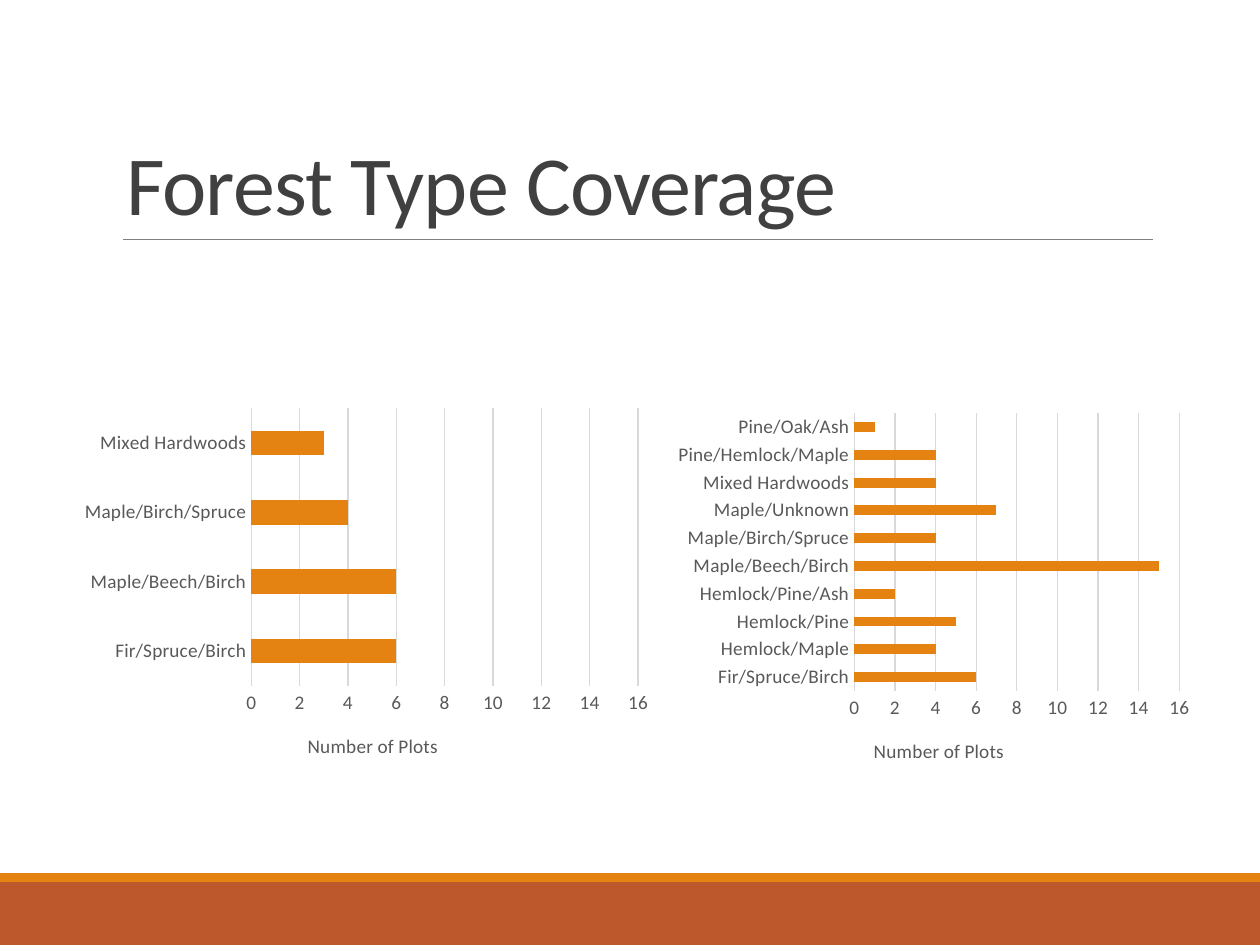
from lxml import etree
from pptx import Presentation
from pptx.chart.data import CategoryChartData
from pptx.dml.color import RGBColor
from pptx.enum.chart import XL_CHART_TYPE, XL_TICK_MARK
from pptx.enum.shapes import MSO_CONNECTOR, MSO_SHAPE
from pptx.enum.text import MSO_ANCHOR, MSO_AUTO_SIZE, PP_ALIGN
from pptx.oxml import parse_xml
from pptx.oxml.ns import nsdecls, qn
from pptx.util import Inches, Pt

FONT = "Calibri"
ORANGE, RUST = "E48312", "BD582C"
DARK, GREY, PALE = "404040", "595959", "D9D9D9"


def color(code):
    return RGBColor.from_string(code)


def style(font, size, code):
    font.name, font.size, font.bold = FONT, Pt(size), False
    font.color.rgb = color(code)


def stroke(line, code, width):
    line.color.rgb = color(code)
    line.width = Pt(width)


def band(slide, left, top, width, height, code):
    bar = slide.shapes.add_shape(MSO_SHAPE.RECTANGLE, Inches(left), Inches(top),
                                 Inches(width), Inches(height))
    bar.shadow.inherit = False
    bar.fill.solid()
    bar.fill.fore_color.rgb = color(code)
    bar.line.fill.background()


def footer(slide, left, top, width, height):
    trim = 0.07
    band(slide, left, top + trim, width, height - trim, RUST)
    band(slide, left, top, width, trim, ORANGE)


def heading(slide, text, left, top, width, height):
    """Fill the title placeholder and rule a line along its foot."""
    title = slide.shapes.title
    title.left, title.top = Inches(left), Inches(top)
    title.width, title.height = Inches(width), Inches(height)
    frame = title.text_frame
    frame.text = text
    frame.word_wrap = True
    frame.auto_size = MSO_AUTO_SIZE.NONE
    frame.vertical_anchor = MSO_ANCHOR.BOTTOM
    para = frame.paragraphs[0]
    para.alignment = PP_ALIGN.LEFT
    para.line_spacing = 0.85
    run = para.runs[0]
    style(run.font, 48, DARK)
    run.font.bold = None
    run.font._element.set("spc", "-50")

    foot = Inches(top + height)
    rule = slide.shapes.add_connector(MSO_CONNECTOR.STRAIGHT, Inches(left + 0.08),
                                      foot, Inches(left + width), foot)
    stroke(rule.line, "808080", 0.5)
    etree.SubElement(rule._element.spPr, qn("a:effectLst"))


def layout(x, y, size=None):
    """Give a manual layout in fractions of the chart."""
    parts = [("xMode", "edge"), ("yMode", "edge"), ("x", x), ("y", y)]
    if size:
        parts.insert(0, ("layoutTarget", "inner"))
        parts += [("w", size[0]), ("h", size[1])]
    body = "".join(f'<c:{tag} val="{val}"/>' for tag, val in parts)
    return parse_xml(f'<c:layout {nsdecls("c")}><c:manualLayout>{body}'
                     "</c:manualLayout></c:layout>")


def place(parent, node, index):
    for old in parent.findall(qn("c:layout")):
        parent.remove(old)
    parent.insert(index, node)


def bars(slide, counts, left, top, width, height, plot, label):
    """Chart plot counts; plot is (x, width) and label is x, as fractions."""
    data = CategoryChartData()
    data.categories = list(counts)
    data.add_series("Series 1", list(counts.values()))
    chart = slide.shapes.add_chart(XL_CHART_TYPE.BAR_CLUSTERED, Inches(left),
                                   Inches(top), Inches(width), Inches(height),
                                   data).chart
    chart.has_legend = chart.has_title = False
    style(chart.font, 11, "000000")
    group = chart.plots[0]
    group.gap_width = 182
    group.vary_by_categories = False
    fill = group.series[0].format.fill
    fill.solid()
    fill.fore_color.rgb = color(ORANGE)

    cats, vals = chart.category_axis, chart.value_axis
    for axis in (cats, vals):
        axis.major_tick_mark = axis.minor_tick_mark = XL_TICK_MARK.NONE
        style(axis.tick_labels.font, 11, GREY)
    cats.has_major_gridlines = False
    stroke(cats.format.line, PALE, 0.75)
    vals.format.line.fill.background()
    vals.minimum_scale, vals.maximum_scale, vals.major_unit = 0, 16, 2
    vals.has_major_gridlines = True
    stroke(vals.major_gridlines.format.line, PALE, 0.75)

    title = vals.axis_title
    title.text_frame.text = "Number of Plots"
    style(title.text_frame.paragraphs[0].runs[0].font, 11, GREY)
    place(title._element, layout(label, 0.87), 1)
    area = chart._chartSpace.chart.plotArea
    place(area, layout(plot[0], 0.02, (plot[1], 0.735)), 0)


def main():
    deck = Presentation()
    deck.slide_width, deck.slide_height = Inches(10), Inches(7.5)
    slide = deck.slides.add_slide(deck.slide_layouts[5])
    footer(slide, 0, 6.93, 10, 0.57)
    heading(slide, "Forest Type Coverage", 0.9, 0.31, 8.25, 1.59)
    many = {"Fir/Spruce/Birch": 6, "Hemlock/Maple": 4, "Hemlock/Pine": 5,
            "Hemlock/Pine/Ash": 2, "Maple/Beech/Birch": 15,
            "Maple/Birch/Spruce": 4, "Maple/Unknown": 7, "Mixed Hardwoods": 4,
            "Pine/Hemlock/Maple": 4, "Pine/Oak/Ash": 1}
    few = {"Fir/Spruce/Birch": 6, "Maple/Beech/Birch": 6,
           "Maple/Birch/Spruce": 4, "Mixed Hardwoods": 3}
    bars(slide, many, 5.3, 3.22, 4.23, 3, (0.35, 0.61), 0.38)
    bars(slide, few, 0.6, 3.18, 4.65, 3, (0.3, 0.66), 0.39)
    deck.save("out.pptx")


if __name__ == "__main__":
    main()
